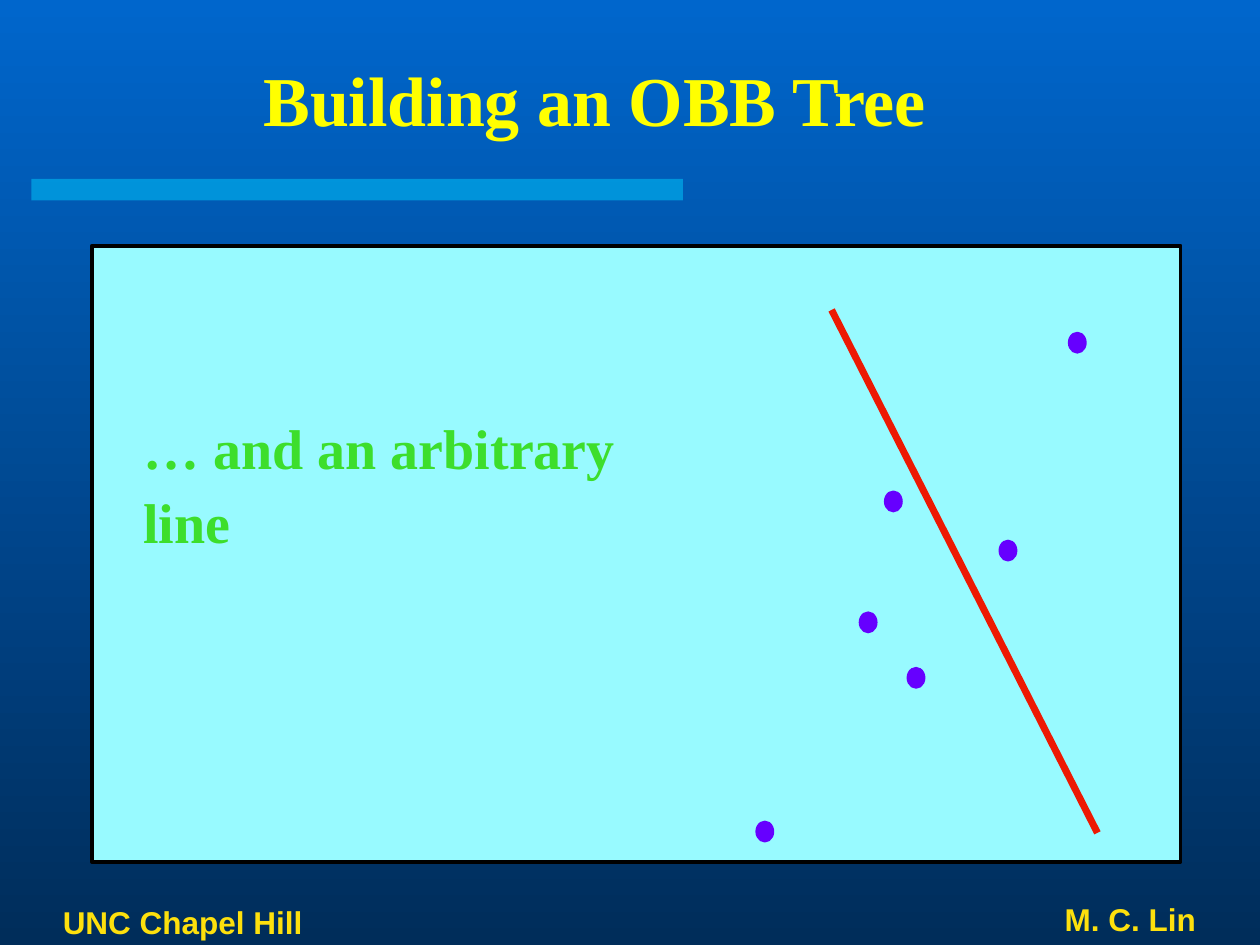
from dataclasses import dataclass

from lxml import etree
from pptx import Presentation, util as u
from pptx.dml.color import RGBColor
from pptx.enum import shapes, text
from pptx.oxml import ns

COLS, ROWS = 100, 75


@dataclass(frozen=True)
class Theme:
    top: str = "0066CC"
    base: str = "002D5A"
    bar: str = "00CCFF"
    panel: str = "98FAFF"
    edge: str = "000000"
    dot: str = "6600FF"
    cut: str = "ED1903"
    head: str = "FFFF00"
    note: str = "3DDE2C"
    foot: str = "FDE00D"
    serif: str = "Times New Roman"
    sans: str = "Arial"
    big: int = 40
    mid: int = 32
    small: int = 18


def hue(code):
    return RGBColor.from_string(code)


def write(frame, words, face, size, color, align=text.PP_ALIGN.LEFT,
          anchor=text.MSO_ANCHOR.MIDDLE, lead=1.0):
    frame.word_wrap = True
    frame.auto_size = text.MSO_AUTO_SIZE.NONE
    frame.vertical_anchor = anchor
    para = frame.paragraphs[0]
    para.alignment = align
    para.line_spacing = lead
    run = para.add_run()
    run.text = words
    run.font.name = face
    run.font.size = u.Pt(size)
    run.font.bold = True
    run.font.color.rgb = hue(color)


class Deck:
    def __init__(self, theme):
        self.theme = theme
        self.show = Presentation()
        self.show.slide_width = u.Inches(10)
        self.show.slide_height = u.Inches(7.5)
        self.slide = None

    def grid(self, col, row):
        return (round(self.show.slide_width * col / COLS),
                round(self.show.slide_height * row / ROWS))

    def box(self, col, row, wide, high):
        return *self.grid(col, row), *self.grid(wide, high)

    def page(self):
        self.slide = self.show.slides.add_slide(self.show.slide_layouts[5])
        fill = self.slide.background.fill
        fill.gradient()
        fill.gradient_angle = 270
        for stop, code in zip(fill.gradient_stops, (self.theme.top, self.theme.base)):
            stop.color.rgb = hue(code)

    def title(self, words, *area):
        head = self.slide.shapes.title
        head.left, head.top, head.width, head.height = self.box(*area)
        write(head.text_frame, words, self.theme.serif, self.theme.big,
              self.theme.head, align=text.PP_ALIGN.CENTER)

    def label(self, words, area, **style):
        item = self.slide.shapes.add_textbox(*self.box(*area))
        write(item.text_frame, words, **style)

    def shape(self, kind, area, fill, edge=None, weight=1, alpha=None):
        item = self.slide.shapes.add_shape(kind, *self.box(*area))
        item.shadow.inherit = False
        item.fill.solid()
        item.fill.fore_color.rgb = hue(fill)
        if alpha:
            tint = item.fill._xPr.find(".//" + ns.qn("a:srgbClr"))
            etree.SubElement(tint, ns.qn("a:alpha"), val=str(alpha * 1000))
        if edge:
            item.line.color.rgb = hue(edge)
            item.line.width = u.Pt(weight)
        else:
            item.line.fill.background()

    def dot(self, col, row):
        wide, high = 1.36, 1.6
        area = (col - wide / 2, row - high / 2, wide, high)
        self.shape(shapes.MSO_SHAPE.OVAL, area, self.theme.dot, self.theme.dot)

    def line(self, start, end, color, weight):
        item = self.slide.shapes.add_connector(
            shapes.MSO_CONNECTOR.STRAIGHT, *self.grid(*start), *self.grid(*end))
        item.line.color.rgb = hue(color)
        item.line.width = u.Pt(weight)
        etree.SubElement(item._element.spPr, ns.qn("a:effectLst"))


def main():
    theme = Theme()
    deck = Deck(theme)
    deck.page()
    deck.title("Building an OBB Tree", 2.9, 3.2, 88.6, 9.3)

    rect = shapes.MSO_SHAPE.RECTANGLE
    deck.shape(rect, (2.5, 14.2, 51.7, 1.7), theme.bar, alpha=50)
    foot = dict(face=theme.sans, size=theme.small, color=theme.foot)
    deck.label("UNC Chapel Hill", (4, 71.4, 24, 3.6), **foot)
    deck.label("M. C. Lin", (52.2, 70.9, 43.7, 4.1), align=text.PP_ALIGN.RIGHT, **foot)

    deck.shape(rect, (7.3, 19.5, 86.4, 48.9), theme.panel, theme.edge, 2.25)
    deck.label("… and an arbitrary line", (10.4, 31.8, 44, 12), face=theme.serif,
               size=theme.mid, color=theme.note, anchor=text.MSO_ANCHOR.TOP, lead=1.1)
    points = [(85.5, 27.2), (70.9, 39.8), (80, 43.7),
              (68.9, 49.4), (72.7, 53.8), (60.7, 66)]
    for col, row in points:
        deck.dot(col, row)
    deck.line((66, 24.6), (87.1, 66.1), theme.cut, 4)

    deck.show.save("out.pptx")


if __name__ == "__main__":
    main()
